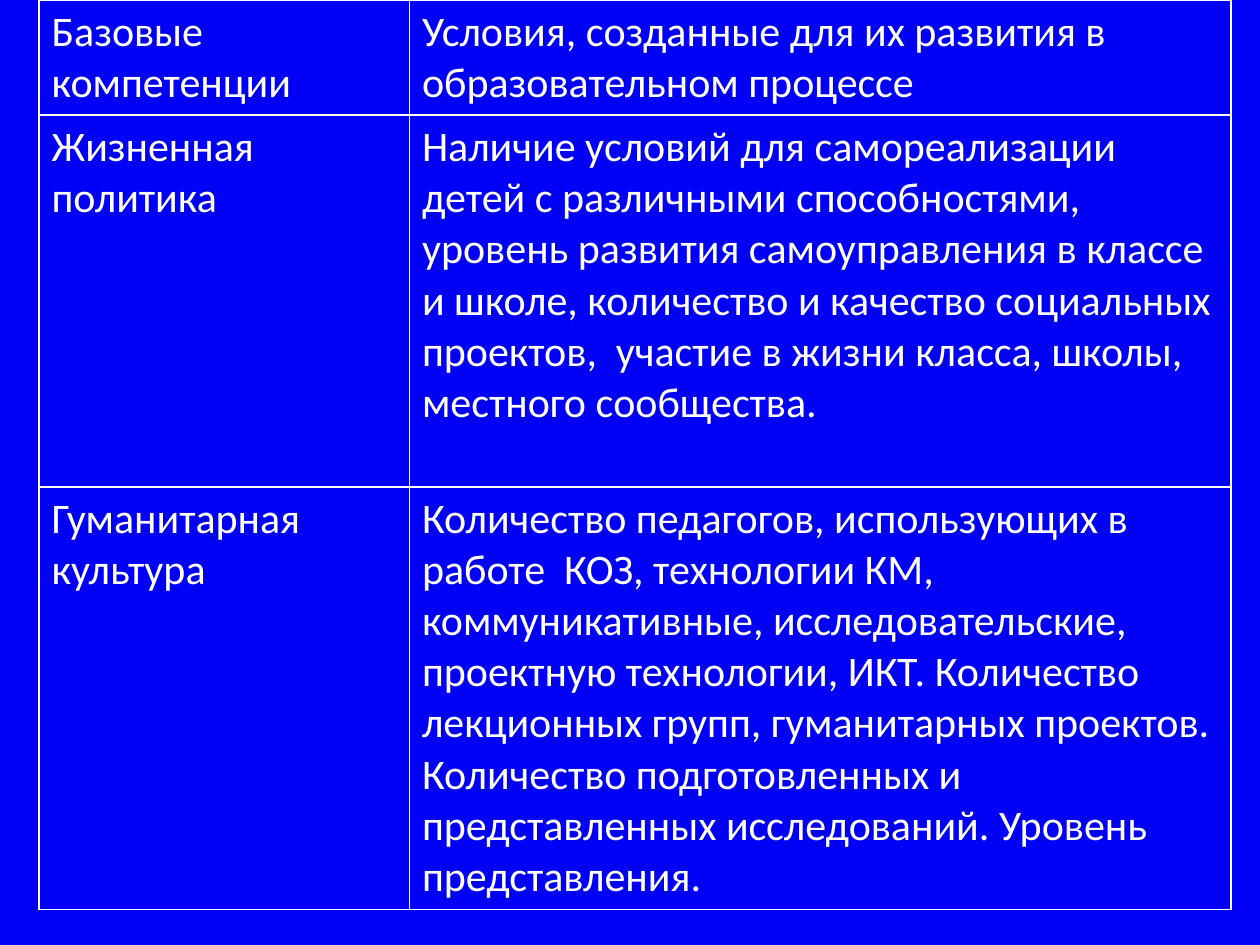
from dataclasses import dataclass
from typing import NamedTuple

from lxml.etree import SubElement
from pptx import Presentation
from pptx.dml.color import RGBColor as Color
from pptx.oxml.ns import qn
from pptx.table import _Cell as Cell
from pptx.util import Inches, Pt


@dataclass(frozen=True)
class Theme:
    """Colours and type sizes of the slide."""

    background: str = "0000F6"
    foreground: str = "FFFFFF"
    font: str = "Calibri"
    text_size: float = 24
    border_width: float = 1


class CompetenceRow(NamedTuple):
    """One row of the table with its height in inches."""

    competence: str
    conditions: str
    height: float


THEME = Theme()
COLUMN_WIDTHS = (2.94, 6.52)
ROWS = (
    CompetenceRow(
        "Базовые компетенции",
        "Условия, созданные для их развития в образовательном процессе",
        0.91,
    ),
    CompetenceRow(
        "Жизненная политика",
        "Наличие условий для самореализации детей с различными способностями, "
        "уровень развития самоуправления в классе и школе, количество и качество "
        "социальных проектов,  участие в жизни класса, школы, местного сообщества.",
        2.95,
    ),
    CompetenceRow(
        "Гуманитарная культура",
        "Количество педагогов, использующих в работе  КОЗ, технологии КМ, "
        "коммуникативные, исследовательские, проектную технологии, ИКТ. "
        "Количество лекционных групп, гуманитарных проектов. Количество "
        "подготовленных и представленных исследований. Уровень представления.",
        3.35,
    ),
)


def write_text(cell: Cell, text: str, *, size: float, color: str, font: str) -> None:
    """Write formatted text into a cell."""
    paragraph = cell.text_frame.paragraphs[0]
    run = paragraph.add_run()
    run.text = text
    run.font.name = font
    run.font.size = Pt(size)
    run.font.bold = False
    run.font.color.rgb = Color.from_string(color)


def draw_borders(cell: Cell, color: str, width: float) -> None:
    """Outline the four sides of a cell."""
    properties = cell._tc.get_or_add_tcPr()
    for side in ("lnL", "lnR", "lnT", "lnB"):
        line = SubElement(properties, qn(f"a:{side}"), w=str(Pt(width)))
        fill = SubElement(line, qn("a:solidFill"))
        SubElement(fill, qn("a:srgbClr"), val=color)


def draw_cell(cell: Cell, text: str, theme: Theme) -> None:
    """Draw one cell with its border, fill and text."""
    draw_borders(cell, theme.foreground, theme.border_width)
    cell.fill.background()
    write_text(cell, text, size=theme.text_size, color=theme.foreground, font=theme.font)


def main() -> None:
    """Build the slide and save the presentation."""
    presentation = Presentation()
    presentation.slide_width, presentation.slide_height = Inches(10), Inches(7.5)
    slide = presentation.slides.add_slide(presentation.slide_layouts[6])
    slide.background.fill.solid()
    slide.background.fill.fore_color.rgb = Color.from_string(THEME.background)

    table = slide.shapes.add_table(
        len(ROWS),
        len(COLUMN_WIDTHS),
        Inches(0.31),
        Inches(0),
        Inches(sum(COLUMN_WIDTHS)),
        Inches(sum(row.height for row in ROWS)),
    ).table
    table.first_row = table.horz_banding = False
    for column, width in zip(table.columns, COLUMN_WIDTHS):
        column.width = Inches(width)
    for table_row, row in zip(table.rows, ROWS):
        table_row.height = Inches(row.height)
        for cell, text in zip(table_row.cells, (row.competence, row.conditions)):
            draw_cell(cell, text, THEME)

    presentation.save("out.pptx")


if __name__ == "__main__":
    main()
